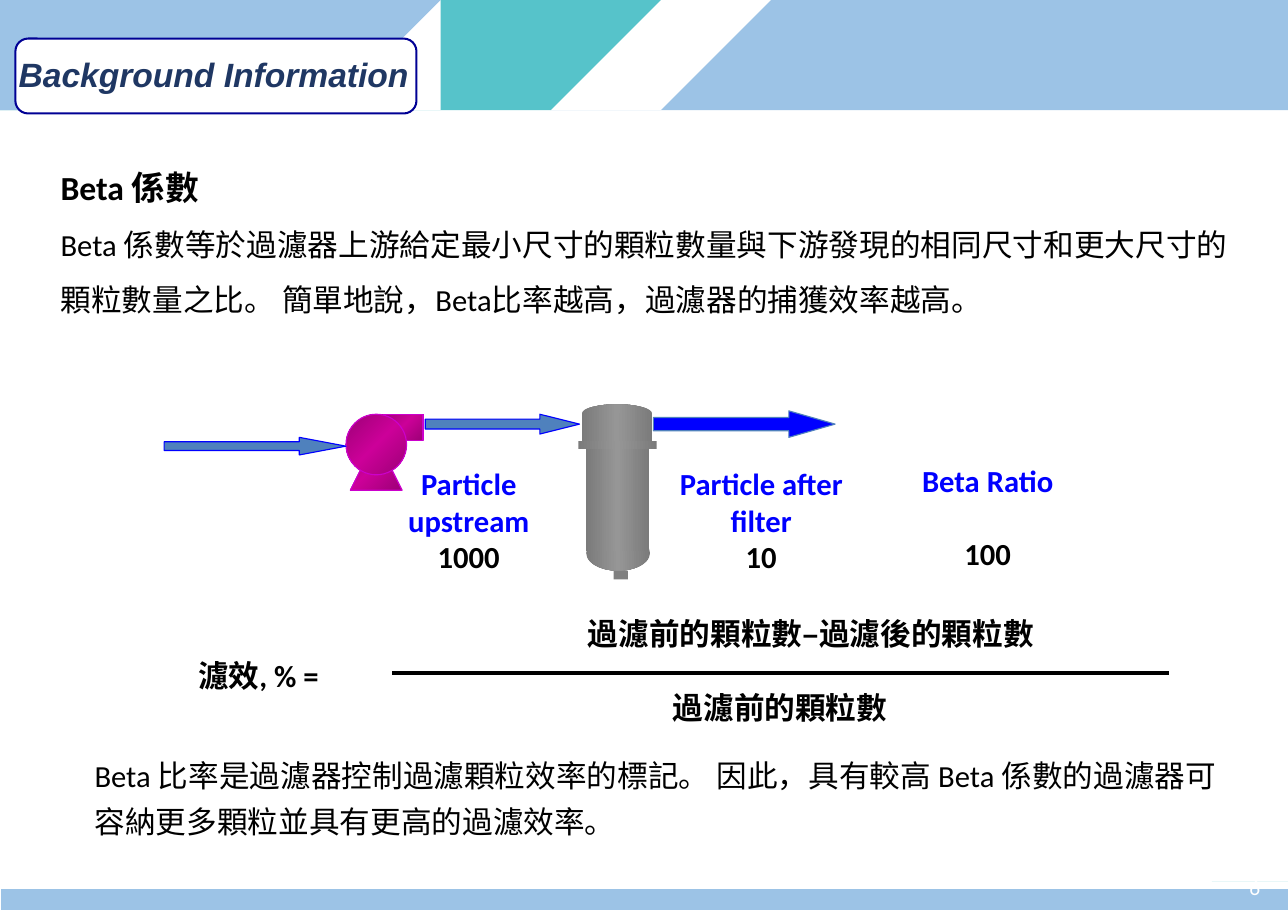
import copy

import pptx
import pptx.dml.color
import pptx.enum.shapes
import pptx.enum.text
import pptx.oxml.ns
import pptx.util
from lxml import etree

Inches = pptx.util.Inches
Pt = pptx.util.Pt
MSO_SHAPE = pptx.enum.shapes.MSO_SHAPE
PP_ALIGN = pptx.enum.text.PP_ALIGN
qn = pptx.oxml.ns.qn

COLORS = {
    "white": "FFFFFF", "black": "000000", "sky": "9CC3E6", "teal": "56C3CA",
    "navy": "000094", "title": "1F3763", "blue": "0000FF", "steel": "4F81BD",
    "plum": "9D0076", "magenta": "CC0099", "pink": "CC00CC",
    "dark_gray": "7B7B7B", "light_gray": "969696", "gray": "808080",
}
PUMP = ("plum", "magenta", "plum")
METAL = ("dark_gray", "light_gray", "dark_gray")

SKY_LEFT = [
    (6.6, 0.35), (6.04, 0.35), (4.96, 0.36), (3.94, 0.38), (2.99, 0.39), (2.12, 0.41),
    (1.36, 0.43), (0.42, 0.45), (0, 0.46), (0, 0.79), (0.29, 0.76), (0.93, 0.71),
    (1.67, 0.66), (2.47, 0.6), (3.33, 0.54), (4.23, 0.48), (5.17, 0.42), (6.12, 0.37),
]
SKY_RIGHT = [
    (11.69, 0.26), (10.94, 0.28), (10.46, 0.3), (9.52, 0.33), (8.62, 0.37), (7.77, 0.41),
    (6.96, 0.46), (6, 0.53), (5.28, 0.58), (4.94, 0.61), (5.38, 0.6), (6.11, 0.59),
    (6.94, 0.59), (7.86, 0.61), (8.33, 0.61), (8.81, 0.63), (9.76, 0.67), (10.34, 0.7),
    (10.78, 0.73), (11.2, 0.77), (11.41, 0.79), (11.69, 0.83),
]
TEAL_WAVE = [
    (11.69, 0.25), (11.69, 0.23), (10.11, 0.23), (9.52, 0.25), (8.88, 0.27), (8.2, 0.29),
    (7.49, 0.32), (6.75, 0.35), (5.96, 0.4), (5.15, 0.44), (4.37, 0.49), (3.69, 0.53),
    (3.02, 0.58), (2.39, 0.62), (1.49, 0.69), (0.44, 0.77), (0, 0.8), (0, 1.18),
    (0.54, 1.09), (0.96, 1.03), (1.42, 0.97), (1.94, 0.9), (2.51, 0.83), (3.13, 0.76),
    (3.8, 0.7), (4.71, 0.61), (5.49, 0.55), (6.34, 0.49), (7.23, 0.43), (8.18, 0.38),
    (9.18, 0.33), (10.24, 0.29), (11.36, 0.25),
]
CORNER = [(11.69, 8.26), (11.69, 7.63), (10.77, 8.26)]


def rgb(name):
    return pptx.dml.color.RGBColor.from_string(COLORS[name])


class SlideBuilder:
    font_name = "Calibri"
    text_size = 20

    def __init__(self, slide):
        self.slide = slide

    def place(self, shape, box):
        shape.left, shape.top, shape.width, shape.height = (Inches(value) for value in box)

    def paint(self, shape, fill, line=None, line_width=0.75, angle=0):
        shape.shadow.inherit = False
        if isinstance(fill, tuple):
            shape.fill.gradient()
            shape.fill.gradient_angle = -angle % 360
            stops = shape._element.spPr.find(qn("a:gradFill")).find(qn("a:gsLst"))
            middle = copy.deepcopy(stops[0])
            middle.set("pos", "50000")
            stops.insert(1, middle)
            for stop, color in zip(shape.fill.gradient_stops, fill):
                stop.color.rgb = rgb(color)
        else:
            shape.fill.solid()
            shape.fill.fore_color.rgb = rgb(fill)
        if line:
            shape.line.color.rgb = rgb(line)
            shape.line.width = Pt(line_width)
        else:
            shape.line.fill.background()

    def preset(self, kind, box, fill, adjustments=(), **paint):
        shape = self.slide.shapes.add_shape(kind, *(Inches(value) for value in box))
        for index, value in enumerate(adjustments):
            shape.adjustments[index] = value
        self.paint(shape, fill, **paint)

    def outline(self, fill, *contours):
        builder = self.slide.shapes.build_freeform(*contours[0][0], scale=Inches(1))
        for index, contour in enumerate(contours):
            if index:
                builder.move_to(*contour[0])
            builder.add_line_segments(contour[1:], close=True)
        self.paint(builder.convert_to_shape(), fill)

    def rule(self, start, end, width):
        connector = self.slide.shapes.add_connector(
            pptx.enum.shapes.MSO_CONNECTOR.STRAIGHT,
            *(Inches(value) for value in start + end))
        connector.line.color.rgb = rgb("black")
        connector.line.width = Pt(width)
        etree.SubElement(connector._element.spPr, qn("a:effectLst"))

    def format(self, paragraph, color="black", size=text_size, bold=False, italic=False,
               font=font_name, align=PP_ALIGN.LEFT, spacing=1.0, before=0):
        paragraph.alignment = align
        paragraph.line_spacing = spacing
        paragraph.space_before = Pt(before)
        for run in paragraph.runs:
            run.font.name = font
            run.font.size = Pt(size)
            run.font.bold = bold
            run.font.italic = italic
            run.font.color.rgb = rgb(color)

    def text(self, box, lines, margin=None, **style):
        shape = self.slide.shapes.add_textbox(*(Inches(value) for value in box))
        frame = shape.text_frame
        frame.word_wrap = True
        if margin is not None:
            self.set_margins(frame, margin)
        frame.text = "\n".join(line for line, _ in lines)
        for paragraph, (_, extra) in zip(frame.paragraphs, lines):
            self.format(paragraph, **{**style, **extra})

    def set_margins(self, frame, margin):
        frame.margin_left = frame.margin_right = Inches(margin)
        frame.margin_top = frame.margin_bottom = Inches(margin)

    def title(self, box, text):
        shape = self.slide.shapes.title
        self.place(shape, box)
        frame = shape.text_frame
        self.set_margins(frame, 0)
        frame.word_wrap = True
        frame.auto_size = pptx.enum.text.MSO_AUTO_SIZE.NONE
        frame.vertical_anchor = pptx.enum.text.MSO_ANCHOR.MIDDLE
        frame.text = text
        self.format(frame.paragraphs[0], color="title", size=22, bold=True, italic=True,
                    font="Arial", align=PP_ALIGN.CENTER)
        self.slide.shapes._spTree.append(shape._element)

    def body(self, box, heading, text):
        shape = self.slide.placeholders[1]
        self.place(shape, box)
        frame = shape.text_frame
        frame.auto_size = pptx.enum.text.MSO_AUTO_SIZE.NONE
        frame.text = f"{heading}\n{text}"
        for paragraph, size, bold in zip(frame.paragraphs, (22, 20), (True, False)):
            properties = paragraph._p.get_or_add_pPr()
            properties.set("marL", "0")
            properties.set("indent", "0")
            etree.SubElement(properties, qn("a:buNone"))
            self.format(paragraph, size=size, bold=bold, spacing=1.5)
        self.slide.shapes._spTree.append(shape._element)


def main():
    presentation = pptx.Presentation()
    presentation.slide_width = Inches(11.69)
    presentation.slide_height = Inches(8.26)
    slide = presentation.slides.add_slide(presentation.slide_layouts[1])
    builder = SlideBuilder(slide)

    builder.preset(MSO_SHAPE.RECTANGLE, (0.01, 8.07, 11.68, 0.19), "sky")
    builder.outline("teal", CORNER)
    builder.outline("sky", SKY_LEFT, SKY_RIGHT)
    builder.outline("teal", TEAL_WAVE)
    builder.preset(MSO_SHAPE.ROUNDED_RECTANGLE, (0.14, 0.35, 3.64, 0.68), "white", (0.17,),
                   line="navy", line_width=1.32)
    builder.title((0.11, 0.47, 3.66, 0.4), "Background Information")
    builder.text((11.34, 7.97, 0.24, 0.22), [("6", {})], margin=0, color="white", size=14,
                 spacing=Pt(14.3))
    builder.body((0.45, 1.28, 10.87, 1.61), "Beta 係數",
                 "Beta 係數等於過濾器上游給定最小尺寸的顆粒數量與下游發現的相同尺寸和更大尺寸的"
                 "顆粒數量之比。 簡單地說，Beta比率越高，過濾器的捕獲效率越高。")

    for kind, box in [
        (MSO_SHAPE.ISOSCELES_TRIANGLE, (3.18, 3.98, 0.47, 0.47)),
        (MSO_SHAPE.RECTANGLE, (3.45, 3.76, 0.39, 0.24)),
        (MSO_SHAPE.OVAL, (3.14, 3.76, 0.55, 0.55)),
    ]:
        builder.preset(kind, box, PUMP, line="pink", angle=45)

    builder.preset(MSO_SHAPE.RECTANGLE, (5.57, 5.18, 0.13, 0.08), "gray")
    for kind, box in [
        (MSO_SHAPE.OVAL, (5.28, 3.67, 0.64, 0.17)),
        (MSO_SHAPE.RECTANGLE, (5.25, 4, 0.71, 0.08)),
        (MSO_SHAPE.OVAL, (5.32, 4.86, 0.58, 0.32)),
        (MSO_SHAPE.RECTANGLE, (5.32, 4.08, 0.57, 0.92)),
        (MSO_SHAPE.RECTANGLE, (5.28, 3.75, 0.64, 0.25)),
    ]:
        builder.preset(kind, box, METAL)

    for box, head, fill, line in [
        ((1.49, 3.97, 1.65, 0.16), 2.65, "steel", "blue"),
        ((3.86, 3.76, 1.4, 0.18), 2, "steel", "blue"),
        ((5.93, 3.73, 1.65, 0.24), 1.75, "blue", "steel"),
    ]:
        builder.preset(MSO_SHAPE.RIGHT_ARROW, box, fill, (0.5, head), line=line)

    for box, label, value, gap in [
        ((3.39, 4.17, 1.73, 1.11), "Particle upstream", "1000", 0),
        ((5.96, 4.17, 1.9, 1.11), "Particle after filter", "10", 0),
        ((8.18, 4.14, 1.57, 1.11), "Beta Ratio", "100", 24),
    ]:
        builder.text(box, [(label, {"color": "blue"}), (value, {"before": gap})],
                     bold=True, align=PP_ALIGN.CENTER)

    builder.rule((3.56, 6.11), (10.61, 6.11), 2.25)
    for box, label, align in [
        ((1.7, 5.91, 2.97, 0.44), "濾效, % =", PP_ALIGN.LEFT),
        ((3.14, 5.53, 8.44, 0.44), "過濾前的顆粒數–過濾後的顆粒數", PP_ALIGN.CENTER),
        ((4.89, 6.2, 4.38, 0.44), "過濾前的顆粒數", PP_ALIGN.CENTER),
    ]:
        builder.text(box, [(label, {})], bold=True, align=align)

    conclusion = ("Beta 比率是過濾器控制過濾顆粒效率的標記。 因此，具有較高 Beta 係數的過濾器"
                  "可容納更多顆粒並具有更高的過濾效率。")
    builder.text((0.76, 6.74, 10.56, 0.91), [(conclusion, {})], spacing=Pt(30))
    presentation.save("out.pptx")


if __name__ == "__main__":
    main()
